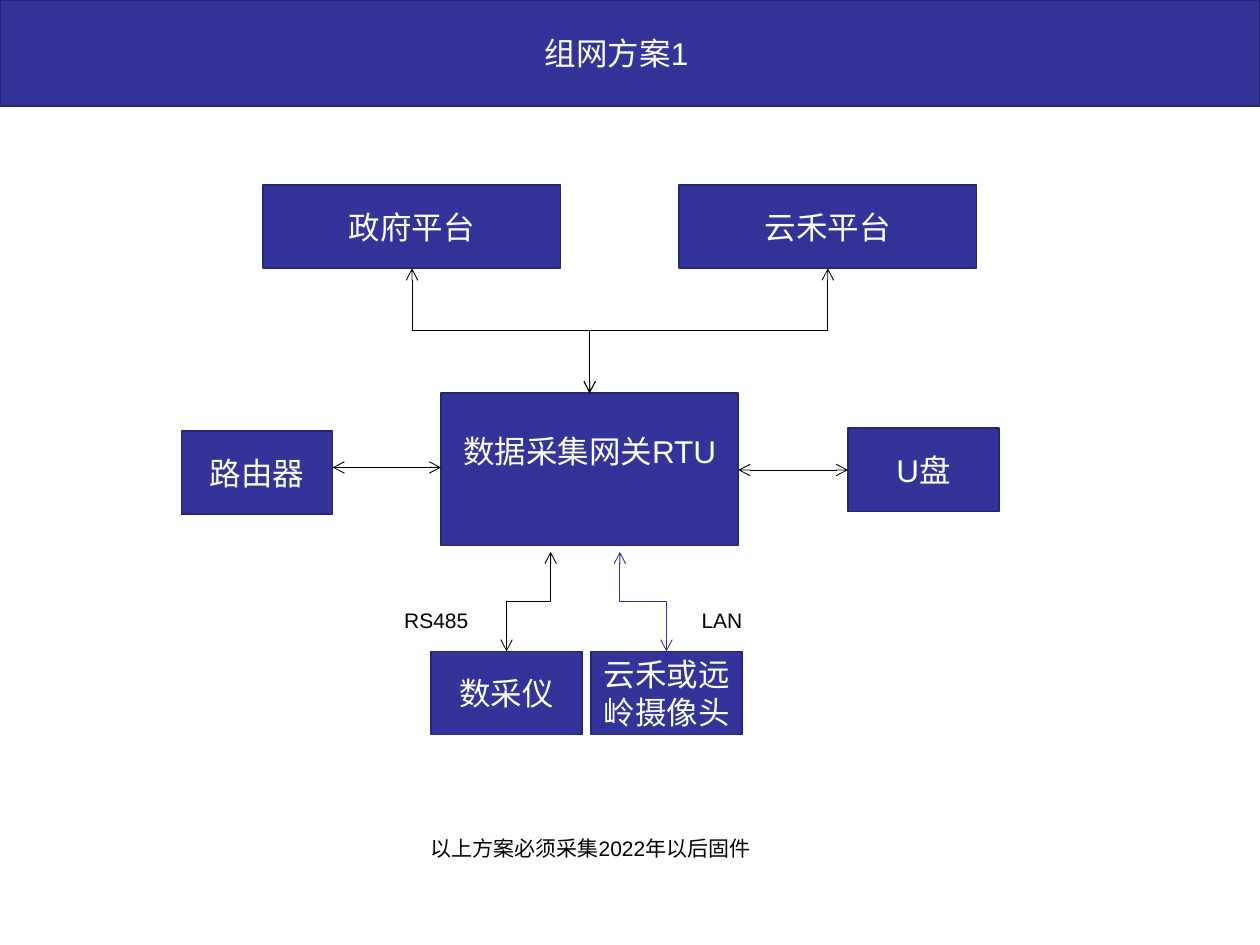
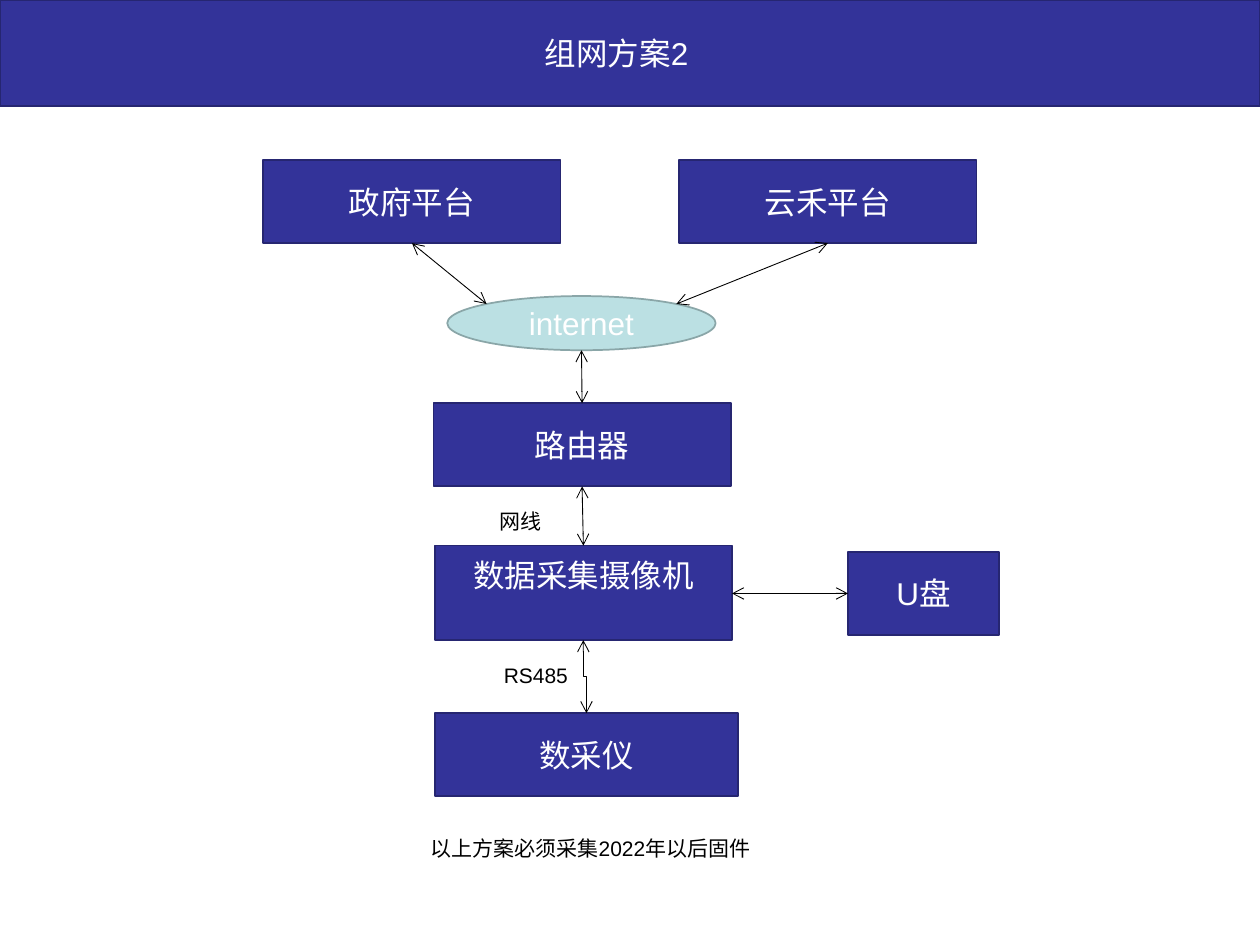
from dataclasses import dataclass
from math import sqrt

from lxml import etree
from pptx import Presentation
from pptx.dml.color import RGBColor
from pptx.enum.lang import MSO_LANGUAGE_ID
from pptx.enum.shapes import MSO_CONNECTOR, MSO_SHAPE
from pptx.enum.text import MSO_ANCHOR, PP_ALIGN
from pptx.oxml.ns import qn
from pptx.slide import Slide
from pptx.text.text import TextFrame
from pptx.util import Pt

RECT = MSO_SHAPE.RECTANGLE
OVAL = MSO_SHAPE.OVAL
LINE = MSO_CONNECTOR.STRAIGHT
ELBOW = MSO_CONNECTOR.ELBOW
CENTER = PP_ALIGN.CENTER
LEFT = PP_ALIGN.LEFT
MIDDLE = MSO_ANCHOR.MIDDLE
TOP = MSO_ANCHOR.TOP
CHINESE = MSO_LANGUAGE_ID.SIMPLIFIED_CHINESE

SCALE = 9144
WIDTH, HEIGHT = 1000, 750

Spot = tuple[float, float]


@dataclass(frozen=True)
class Theme:
    font: str = "Arial"
    navy: str = "333399"
    edge: str = "262671"
    aqua: str = "BBE0E3"
    rim: str = "8AA6A8"
    white: str = "FFFFFF"
    black: str = "000000"
    large: int = 18
    small: int = 12
    border: float = 1
    thin: float = 0.5


THEME = Theme()


@dataclass(frozen=True)
class Box:
    text: str
    x: int
    y: int
    w: int = 120
    h: int = 66
    kind: int = RECT
    fill: str = THEME.navy
    edge: str = THEME.edge
    right: int = 9
    base: int = 5

    @property
    def head(self) -> Spot:
        return self.x + self.w / 2, self.y

    @property
    def foot(self) -> Spot:
        return self.x + self.w / 2, self.y + self.h

    def rim(self, side: int) -> Spot:
        shift = 1 / sqrt(2)
        return (self.x + self.w / 2 * (1 + side * shift),
                self.y + self.h / 2 * (1 - shift))


@dataclass(frozen=True)
class Label:
    text: str
    x: int
    y: int
    w: int = 80
    h: int = 30
    wrap: bool = True


@dataclass(frozen=True)
class Wire:
    start: Spot
    end: Spot
    bent: bool = False
    color: str = THEME.black


@dataclass(frozen=True)
class Page:
    title: str
    boxes: list[Box]
    labels: list[Label]
    wires: list[Wire]


NOTE = Label("以上方案必须采集2022年以后固件", 332, 658, 274)


def px(size: float) -> int:
    return round(size * SCALE)


def rgb(color: str) -> RGBColor:
    return RGBColor.from_string(color)


def write(frame: TextFrame, text: str, size: int, color: str,
          align: int, anchor: int) -> None:
    frame.text = text
    frame.vertical_anchor = anchor
    line = frame.paragraphs[0]
    line.alignment = align
    for run in line.runs:
        run.font.name = THEME.font
        run.font.size = Pt(size)
        run.font.color.rgb = rgb(color)
        run.font.language_id = CHINESE


def draw_box(slide: Slide, box: Box) -> None:
    shape = slide.shapes.add_shape(
        box.kind, px(box.x), px(box.y), px(box.w), px(box.h))
    shape.shadow.inherit = False
    shape.fill.solid()
    shape.fill.fore_color.rgb = rgb(box.fill)
    shape.line.color.rgb = rgb(box.edge)
    shape.line.width = Pt(THEME.border)
    frame = shape.text_frame
    frame.word_wrap = True
    frame.margin_left = px(9)
    frame.margin_right = px(box.right)
    frame.margin_bottom = px(box.base)
    write(frame, box.text, THEME.large, THEME.white, CENTER, MIDDLE)


def draw_label(slide: Slide, label: Label) -> None:
    shape = slide.shapes.add_textbox(
        px(label.x), px(label.y), px(label.w), px(label.h))
    shape.text_frame.word_wrap = label.wrap
    write(shape.text_frame, label.text, THEME.small, THEME.black, LEFT, TOP)


def draw_wire(slide: Slide, wire: Wire) -> None:
    (ax, ay), (bx, by) = wire.start, wire.end
    if wire.bent:
        mx, my = (ax + bx) / 2, (ay + by) / 2
        dx, dy = (bx - ax) / 2, (by - ay) / 2
        ax, ay, bx, by = mx - dy, my + dx, mx + dy, my - dx
    link = slide.shapes.add_connector(
        ELBOW if wire.bent else LINE, px(ax), px(ay), px(bx), px(by))
    if wire.bent:
        link.rotation = 90
    link.line.color.rgb = rgb(wire.color)
    link.line.width = Pt(THEME.thin)
    stroke = link.line._get_or_add_ln()
    for end in ("a:headEnd", "a:tailEnd"):
        etree.SubElement(stroke, qn(end), type="arrow")
    etree.SubElement(link._element.spPr, qn("a:effectLst"))


def level(left: Box, right: Box, y: int) -> Wire:
    return Wire((left.x + left.w, y), (right.x, y))


def hosts(y: int) -> tuple[Box, Box]:
    return Box("政府平台", 209, y, 236), Box("云禾平台", 539, y, 236)


def plan_one() -> Page:
    gov, cloud = hosts(147)
    hub = Box("数据采集网关RTU", 350, 312, 236, 121, base=34)
    meter = Box("数采仪", 342, 517)
    cam = Box("云禾或远岭摄像头", 469, 517)
    disk = Box("U盘", 673, 340)
    router = Box("路由器", 144, 342)
    return Page(
        "组网方案1",
        [gov, cloud, hub, meter, cam, disk, router],
        [Label("RS485", 311, 477), Label("LAN", 547, 477)],
        [
            Wire(gov.foot, hub.head, True),
            Wire(cloud.foot, hub.head, True),
            Wire((437, 438), meter.head, True),
            Wire((492, 438), cam.head, True, THEME.navy),
            level(hub, disk, 373),
            level(router, hub, 371),
        ],
    )


def plan_two() -> Page:
    gov, cloud = hosts(127)
    net = Box("internet", 355, 235, 213, 43, OVAL, THEME.aqua, THEME.rim)
    router = Box("路由器", 344, 320, 236)
    cam = Box("数据采集摄像机", 345, 433, 236, 75, base=34)
    meter = Box("数采仪", 345, 566, 241)
    disk = Box("U盘", 673, 438)
    return Page(
        "组网方案2",
        [gov, cloud, net, router, cam, meter, disk],
        [Label("网线", 387, 399), Label("RS485", 390, 521)],
        [
            Wire(gov.foot, net.rim(-1)),
            Wire(net.rim(1), cloud.foot),
            Wire(net.foot, router.head),
            Wire(router.foot, cam.head),
            Wire(cam.foot, meter.head, True),
            level(cam, disk, 471),
        ],
    )


def main() -> None:
    deck = Presentation()
    deck.slide_width, deck.slide_height = px(WIDTH), px(HEIGHT)
    for page in (plan_one(), plan_two()):
        slide = deck.slides.add_slide(deck.slide_layouts[6])
        band = Box(page.title, 0, 0, WIDTH, 84, right=30)
        for box in [band, *page.boxes]:
            draw_box(slide, box)
        for label in [*page.labels, NOTE]:
            draw_label(slide, label)
        for wire in page.wires:
            draw_wire(slide, wire)
    deck.save("out.pptx")


if __name__ == "__main__":
    main()
